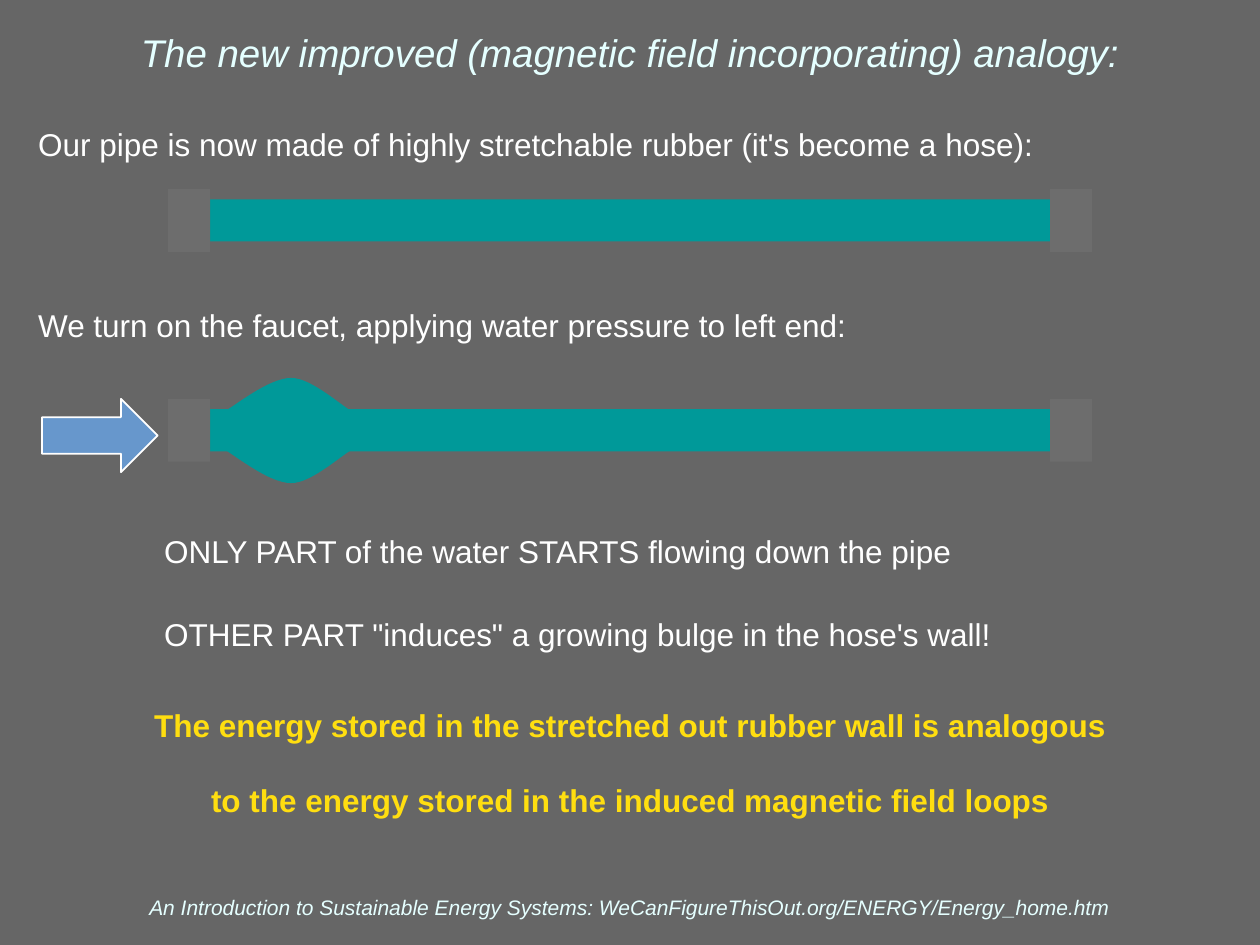
from pptx import Presentation
from pptx.dml.color import RGBColor
from pptx.enum.shapes import MSO_SHAPE
from pptx.enum.text import MSO_ANCHOR, PP_ALIGN
from pptx.util import Cm, Pt

COLORS = {
    "background": "666666",
    "pale": "E5FFFF",
    "white": "FFFFFF",
    "yellow": "FFDE10",
    "water": "009999",
    "clamp": "6D6D6D",
    "arrow": "6797CC",
}


def write(para, text, size=18, color="white", bold=False, italic=False,
          align=PP_ALIGN.LEFT, before=0, indent=0):
    para.alignment = align
    para.space_before = Pt(before)
    if indent:
        para._p.get_or_add_pPr().set("marL", str(Cm(indent)))
    span = para.add_run()
    span.text = text
    span.font.name = "Arial"
    span.font.size = Pt(size)
    span.font.bold = bold
    span.font.italic = italic
    span.font.color.rgb = RGBColor.from_string(COLORS[color])


def paint(shape, fill, line=None):
    shape.shadow.inherit = False
    shape.fill.solid()
    shape.fill.fore_color.rgb = RGBColor.from_string(COLORS[fill])
    if line:
        shape.line.color.rgb = RGBColor.from_string(COLORS[line])
        shape.line.width = Pt(1)
    else:
        shape.line.fill.background()


deck = Presentation()
deck.slide_width, deck.slide_height = Cm(25.4), Cm(19.05)
page = deck.slides.add_slide(deck.slide_layouts[6])
page.background.fill.solid()
page.background.fill.fore_color.rgb = RGBColor.from_string(COLORS["background"])

# Text frames: footer, title and body
frames = []
for left, top, width, height, anchor in [
    (0.85, 17.93, 23.7, 0.74, MSO_ANCHOR.BOTTOM),
    (0.85, 0.21, 23.7, 1.69, MSO_ANCHOR.MIDDLE),
    (0.64, 2.4, 24.13, 14.75, MSO_ANCHOR.TOP),
]:
    box = page.shapes.add_textbox(Cm(left), Cm(top), Cm(width), Cm(height))
    frame = box.text_frame
    frame.word_wrap = True
    frame.vertical_anchor = anchor
    frame.margin_left = frame.margin_right = Cm(0.13)
    frame.margin_top = frame.margin_bottom = Cm(0.13)
    frames.append(frame)
footer, title, body = frames

write(footer.paragraphs[0],
      "An Introduction to Sustainable Energy Systems: "
      "WeCanFigureThisOut.org/ENERGY/Energy_home.htm",
      size=12, color="pale", italic=True, align=PP_ALIGN.CENTER)
write(title.paragraphs[0],
      "The new improved (magnetic field incorporating) analogy:",
      size=22, color="pale", italic=True, align=PP_ALIGN.CENTER)

# Body lines, spaced to leave room for the hoses
conclusion = {"color": "yellow", "bold": True, "align": PP_ALIGN.CENTER}
lines = [
    ("Our pipe is now made of highly stretchable rubber (it's become a hose):", {}),
    ("We turn on the faucet, applying water pressure to left end:", {"before": 81.5}),
    ("ONLY PART of the water STARTS flowing down the pipe",
     {"before": 107.5, "indent": 2.54}),
    ("OTHER PART \"induces\" a growing bulge in the hose's wall!",
     {"before": 26, "indent": 2.54}),
    ("The energy stored in the stretched out rubber wall is analogous",
     {"before": 30.5, **conclusion}),
    ("to the energy stored in the induced magnetic field loops",
     {"before": 21, **conclusion}),
]
for index, (text, style) in enumerate(lines):
    para = body.add_paragraph() if index else body.paragraphs[0]
    write(para, text, **style)

# Two hoses, each a tube between two clamps
for hose_top in (3.81, 8.04):
    hose = page.shapes.add_group_shape().shapes
    for left, top, width, height, color in [
        (3.6, hose_top + 0.21, 18, 0.85, "water"),
        (3.39, hose_top, 0.85, 1.27, "clamp"),
        (21.17, hose_top, 0.85, 1.27, "clamp"),
    ]:
        part = hose.add_shape(MSO_SHAPE.RECTANGLE, Cm(left), Cm(top),
                              Cm(width), Cm(height))
        paint(part, color)

# Bulge in the second hose: Bezier halves, mirrored about the hose axis
axis = 8.68
curves = [
    [(4.47, 8.33), (4.72, 8.2), (5.41, 7.62), (5.87, 7.62)],
    [(5.87, 7.62), (6.3, 7.62), (6.93, 8.23), (7.16, 8.33)],
]
steps = 16
outline = []
for curve in curves:
    for step in range(steps + 1):
        t = step / steps
        weights = [(1 - t) ** 3, 3 * t * (1 - t) ** 2, 3 * t * t * (1 - t), t ** 3]
        outline.append([sum(w * point[i] for w, point in zip(weights, curve))
                        for i in (0, 1)])
outline.append((7.29, 8.33))
for side in (1, -1):
    start, *rest = [(x, axis + side * (y - axis)) for x, y in [(4.24, 8.33), *outline]]
    builder = hose.build_freeform(Cm(start[0]), Cm(start[1]))
    builder.add_line_segments([(Cm(x), Cm(y)) for x, y in rest], close=True)
    paint(builder.convert_to_shape(), "water")

# Water pressure arrow
arrow = page.shapes.add_shape(MSO_SHAPE.RIGHT_ARROW, Cm(0.85), Cm(8.04),
                              Cm(2.33), Cm(1.48))
paint(arrow, "arrow", line="white")

deck.save("out.pptx")
